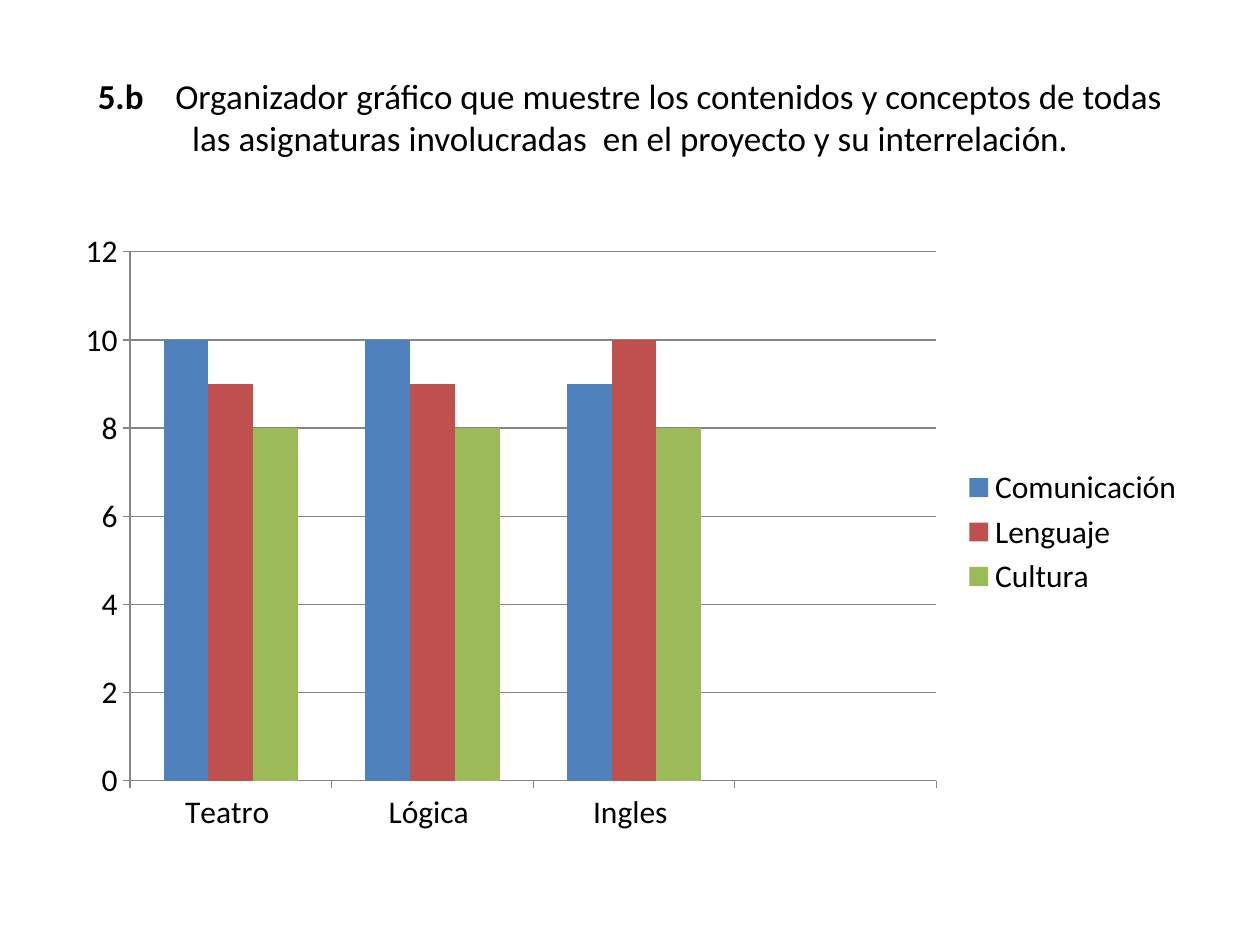
"""Build a slide with a title and a clustered column chart of subjects."""
from pptx import Presentation
from pptx.chart.data import CategoryChartData
from pptx.dml.color import RGBColor
from pptx.enum.chart import XL_CHART_TYPE as ChartType, XL_LEGEND_POSITION as LegendPos
from pptx.enum.chart import XL_TICK_MARK as Tick
from pptx.enum.text import MSO_ANCHOR as Anchor, PP_ALIGN as Align
from pptx.util import Cm, Pt

FONT = "Calibri"
BLACK, GRAY = "000000", "868686"
TITLE = [
    ("5.b", True, 0),
    (" ", False, 13.5),
    ("Organizador gráfico que muestre los contenidos y conceptos de todas "
     "las asignaturas involucradas", False, 0),
    (" ", False, 4.5),
    ("en el proyecto y su interrelación.", False, 0),
]
SUBJECTS = ["Teatro ", "Lógica ", "Ingles ", ""]
SERIES = [
    ("Comunicación", (10, 10, 9, None), "4F81BD"),
    ("Lenguaje ", (9, 9, 10, None), "C0504D"),
    ("Cultura ", (8, 8, 8, None), "9BBB59"),
]
LEFT, WIDTH = Cm(1.27), Cm(22.86)


def rgb(color):
    return RGBColor.from_string(color)


def set_font(font, size):
    font.name, font.size = FONT, Pt(size)
    font.color.rgb = rgb(BLACK)


def set_line(line):
    line.color.rgb = rgb(GRAY)
    line.width = Pt(0.75)


def add_title(s):
    tf = s.shapes.add_textbox(LEFT, Cm(0.76), WIDTH, Cm(3.18)).text_frame
    tf.word_wrap = True
    tf.vertical_anchor = Anchor.MIDDLE
    p = tf.paragraphs[0]
    p.alignment = Align.CENTER
    set_font(p.font, 20)
    for text, bold, spacing in TITLE:
        r = p.add_run()
        r.text, r.font.bold = text, bold
        if spacing:
            r._r.get_or_add_rPr().set("spc", str(int(spacing * 100)))


def add_subject_chart(s):
    data = CategoryChartData()
    data.categories = SUBJECTS
    for name, values, _ in SERIES:
        data.add_series(name, values)
    chart = s.shapes.add_chart(
        ChartType.COLUMN_CLUSTERED, LEFT, Cm(4.44), WIDTH, Cm(12.57), data).chart
    set_font(chart.font, 18)
    chart.has_title = False
    chart.has_legend = True
    chart.legend.position = LegendPos.RIGHT
    chart.legend.include_in_layout = False

    plot = chart.plots[0]
    plot.gap_width, plot.overlap = 150, 0
    plot.vary_by_categories = False
    for series, (_, _, color) in zip(plot.series, SERIES):
        series.format.fill.solid()
        series.format.fill.fore_color.rgb = rgb(color)

    for axis in (chart.category_axis, chart.value_axis):
        axis.major_tick_mark, axis.minor_tick_mark = Tick.OUTSIDE, Tick.NONE
        set_line(axis.format.line)
    axis = chart.value_axis
    axis.minimum_scale, axis.maximum_scale, axis.major_unit = 0, 12, 2
    axis.has_major_gridlines = True
    set_line(axis.major_gridlines.format.line)


def main():
    prs = Presentation()
    prs.slide_width, prs.slide_height = Cm(25.4), Cm(19.05)
    s = prs.slides.add_slide(prs.slide_layouts[6])
    add_title(s)
    add_subject_chart(s)
    prs.save("out.pptx")


if __name__ == "__main__":
    main()
